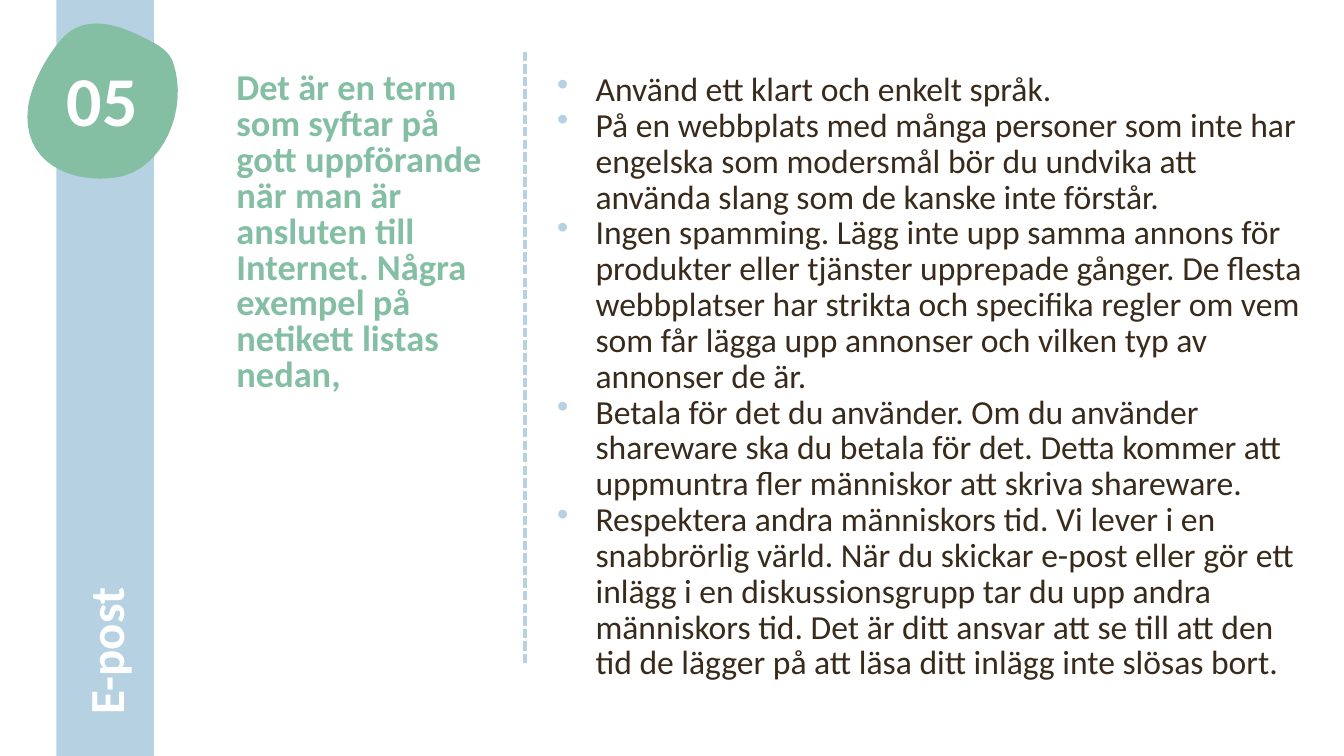
from lxml.etree import SubElement
from pptx import Presentation
from pptx.dml.color import RGBColor
from pptx.enum.dml import MSO_LINE
from pptx.enum.shapes import MSO_CONNECTOR as LINK, MSO_SHAPE as SHAPE
from pptx.enum.text import MSO_ANCHOR as ANCHOR, MSO_AUTO_SIZE as FIT, PP_ALIGN as ALIGN
from pptx.oxml.ns import qn
from pptx.util import Cm, Pt

BLUE = RGBColor(0xB6, 0xD1, 0xE1)
GREEN = RGBColor(0x84, 0xBF, 0xA4)
BROWN = RGBColor(0x38, 0x2B, 0x1B)
WHITE = RGBColor(0xFF, 0xFF, 0xFF)

TOPIC = "E-post"
NUMBER = "05"
LEAD = ("Det är en term som syftar på gott uppförande när man är ansluten "
        "till Internet. Några exempel på netikett listas nedan,")
RULES = [
    "Använd ett klart och enkelt språk.",
    "På en webbplats med många personer som inte har engelska som modersmål "
    "bör du undvika att använda slang som de kanske inte förstår.",
    "Ingen spamming. Lägg inte upp samma annons för produkter eller tjänster "
    "upprepade gånger. De flesta webbplatser har strikta och specifika regler "
    "om vem som får lägga upp annonser och vilken typ av annonser de är.",
    "Betala för det du använder. Om du använder shareware ska du betala för "
    "det. Detta kommer att uppmuntra fler människor att skriva shareware.",
    "Respektera andra människors tid. Vi lever i en snabbrörlig värld. När du "
    "skickar e-post eller gör ett inlägg i en diskussionsgrupp tar du upp "
    "andra människors tid. Det är ditt ansvar att se till att den tid de "
    "lägger på att läsa ditt inlägg inte slösas bort.",
]

# Lengths in cm: left, top, width, height
WIDE, HIGH = 33.87, 19.05
BAND = (1.42, 0, 2.46, HIGH)
TOPIC_BOX = (-8, 6.68, 21.34, 1.8)
NUMBER_BOX = (0.43, 1.55, 4.29, 2.39)
TOP = 1.7
LEAD_BOX = (5.66, TOP, 6.91, 8.61)
RULES_BOX = (13.77, TOP, 19.43, 14)
DASH = (13.23, 16.71, 13.23, 1.27)

# Blob outline: a start, then two handles and an end for each curve
START = (3, 0.69)
CURVES = [
    ((2.49, 0.53), (1.96, 0.53), (1.55, 0.99)),
    ((1.17, 1.42), (0.79, 2.13), (0.71, 2.69)),
    ((0.53, 4.06), (1.73, 4.65), (2.95, 4.47)),
    ((4.14, 4.27), (4.75, 2.72), (4.37, 1.6)),
    ((4.27, 1.27), (3.96, 1.12), (3.66, 0.97)),
    ((3.45, 0.86), (3.23, 0.76), START),
]
STEPS = 16


def cms(nums):
    return [Cm(n) for n in nums]


def trace(start, curves):
    """Return points in cm along a chain of cubic Bézier curves."""
    points = []
    for a, b, end in curves:
        for i in range(1, STEPS + 1):
            t = i / STEPS
            u = 1 - t
            points.append(tuple(
                u**3 * p + 3 * u * u * t * q + 3 * u * t * t * r + t**3 * s
                for p, q, r, s in zip(start, a, b, end)))
        start = end
    return points


def paint(shape, color):
    shape.shadow.inherit = False
    shape.fill.solid()
    shape.fill.fore_color.rgb = color
    shape.line.fill.background()


def dot(para):
    """Give the paragraph a blue bullet."""
    props = para._p.get_or_add_pPr()
    tint = SubElement(props, qn("a:buClr"))
    SubElement(tint, qn("a:srgbClr")).set("val", str(BLUE))
    SubElement(props, qn("a:buChar")).set("char", "•")


def write(shapes, box, lines, color, font, form, margin=0, hang=0):
    shape = shapes.add_textbox(*cms(box))
    frame = shape.text_frame
    frame.word_wrap = True
    for i, line in enumerate(lines):
        para = frame.add_paragraph() if i else frame.paragraphs[0]
        for name, value in form.items():
            setattr(para, name, value)
        props = para._p.get_or_add_pPr()
        props.set("marL", str(Cm(margin)))
        props.set("indent", str(Cm(-hang)))
        if hang:
            dot(para)
        run = para.add_run()
        run.text = line
        for name, value in {"name": "Calibri", **font}.items():
            setattr(run.font, name, value)
        run.font.color.rgb = color
    return shape


def main():
    deck = Presentation()
    deck.slide_width, deck.slide_height = Cm(WIDE), Cm(HIGH)
    shapes = deck.slides.add_slide(deck.slide_layouts[6]).shapes

    paint(shapes.add_shape(SHAPE.RECTANGLE, *cms(BAND)), BLUE)
    path = shapes.build_freeform(*cms(START), scale=1.0)
    path.add_line_segments([cms(point) for point in trace(START, CURVES)])
    paint(path.convert_to_shape(), GREEN)

    topic = write(shapes, TOPIC_BOX, [TOPIC], WHITE,
                  {"size": Pt(35), "bold": True}, {"line_spacing": Pt(40.2)})
    topic.rotation = 270
    topic.text_frame.vertical_anchor = ANCHOR.MIDDLE
    write(shapes, NUMBER_BOX, [NUMBER], WHITE, {"size": Pt(50), "bold": True},
          {"alignment": ALIGN.CENTER, "line_spacing": 0.9})

    tight = {"line_spacing": Pt(25.6)}
    lead = write(shapes, LEAD_BOX, [LEAD], GREEN,
                 {"size": Pt(26), "bold": True}, tight, margin=0.05)
    lead.text_frame.auto_size = FIT.SHAPE_TO_FIT_TEXT
    write(shapes, RULES_BOX, RULES, BROWN, {"size": Pt(24)}, tight,
          margin=0.99, hang=0.97)

    dash = shapes.add_connector(LINK.STRAIGHT, *cms(DASH))
    dash.line.color.rgb = BLUE
    dash.line.width = Pt(2.25)
    dash.line.dash_style = MSO_LINE.SQUARE_DOT
    SubElement(dash._element.spPr, qn("a:effectLst"))

    deck.save("out.pptx")


if __name__ == "__main__":
    main()
